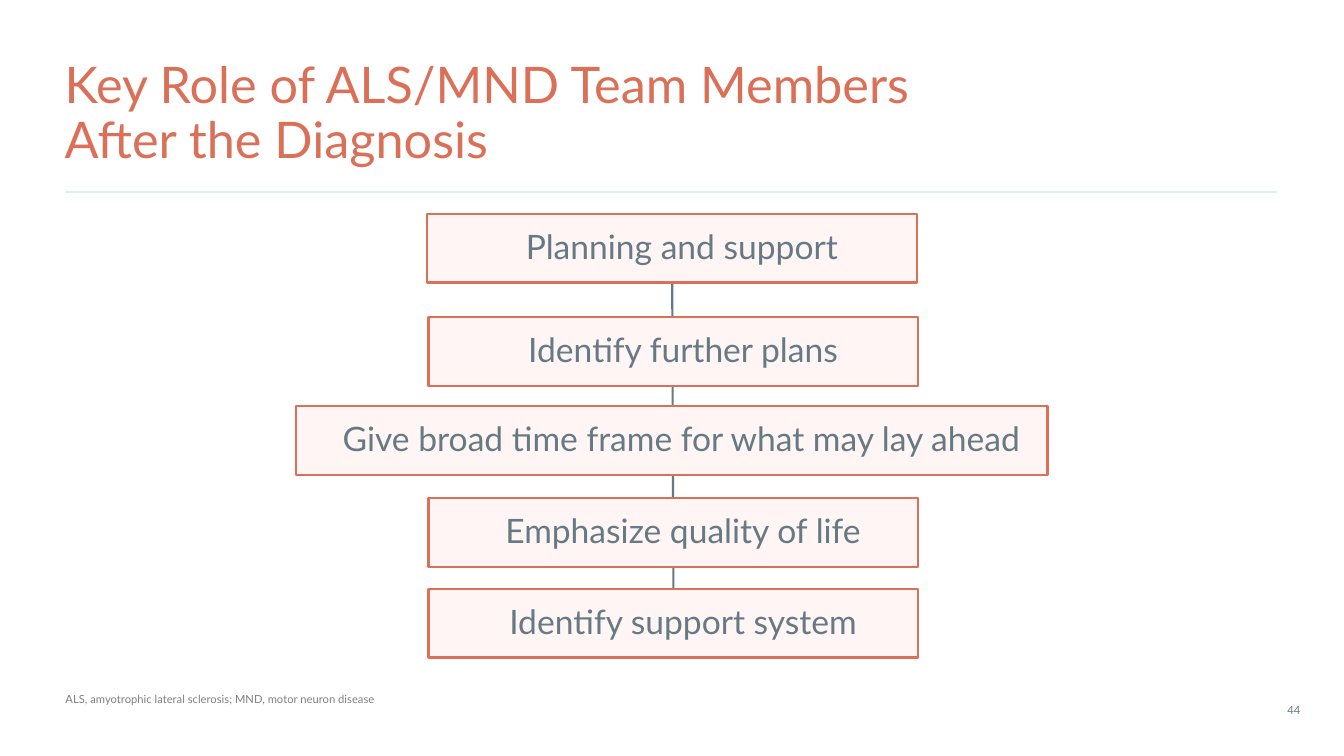
"""Build the slide on the key role of ALS/MND team members."""
import pptx
import pptx.dml.color
import pptx.enum.shapes
import pptx.enum.text
import pptx.oxml
import pptx.util

Cm = pptx.util.Cm
ALIGN = pptx.enum.text.PP_ALIGN
ANCHOR = pptx.enum.text.MSO_ANCHOR

COLORS = {
    "coral": "DB7059",
    "slate": "667A84",
    "blush": "FFF5F5",
    "mint": "E0EFED",
    "gray": "808080",
}

STEPS = [
    ("Planning and support", 10.77, 5.39, 12.34),
    ("Identify further plans", 10.8, 7.99, 12.34),
    ("Give broad time frame for what may lay ahead", 7.45, 10.24, 18.95),
    ("Emphasize quality of life", 10.8, 12.55, 12.34),
    ("Identify support system", 10.8, 14.84, 12.34),
]


class Deck:
    """Hold the style and the current slide."""

    def __init__(self):
        self.file = pptx.Presentation()
        self.file.slide_width = Cm(33.87)
        self.file.slide_height = Cm(19.05)
        self.slide = self.file.slides.add_slide(self.file.slide_layouts[5])
        self.shapes = self.slide.shapes

    def color(self, name):
        """Return the named colour."""
        return pptx.dml.color.RGBColor.from_string(COLORS[name])

    def label(self, shape, text, size, color, insets=None, para=None, **frame):
        """Put formatted text into a shape."""
        body = shape.text_frame
        body.text = text
        if insets:
            sides = ("left", "top", "right", "bottom")
            frame.update({f"margin_{side}": Cm(gap) for side, gap in zip(sides, insets)})
        for key, value in frame.items():
            setattr(body, key, value)
        first = body.paragraphs[0]
        for key, value in (para or {}).items():
            setattr(first, key, value)
        font = {"name": "Lato", "size": pptx.util.Pt(size), "bold": False}
        for key, value in font.items():
            setattr(first.font, key, value)
        first.font.color.rgb = self.color(color)

    def title(self, text, *place):
        """Fill and place the title."""
        shape = self.shapes.title
        for key, value in zip(("left", "top", "width", "height"), place):
            setattr(shape, key, Cm(value))
        self.label(shape, text, 36, "coral", (0, 0, 0, 0),
                   {"alignment": ALIGN.LEFT, "line_spacing": 0.9},
                   word_wrap=True, vertical_anchor=ANCHOR.MIDDLE,
                   auto_size=pptx.enum.text.MSO_AUTO_SIZE.NONE)

    def line(self, color, *ends):
        """Draw a straight line."""
        kind = pptx.enum.shapes.MSO_CONNECTOR.STRAIGHT
        line = self.shapes.add_connector(kind, *map(Cm, ends))
        line.line.color.rgb = self.color(color)
        line.line.width = pptx.util.Pt(1.5)
        props = line._element.spPr
        props.append(pptx.oxml.parse_xml(
            '<a:effectLst xmlns:a="http://schemas.openxmlformats.org/drawingml/2006/main"/>'))
        return line

    def box(self, text, left, top, width):
        """Draw one step of the chain."""
        kind = pptx.enum.shapes.MSO_SHAPE.RECTANGLE
        shape = self.shapes.add_shape(kind, *map(Cm, (left, top, width, 1.73)))
        shape.shadow.inherit = False
        shape.fill.solid()
        shape.fill.fore_color.rgb = self.color("blush")
        shape.line.color.rgb = self.color("coral")
        shape.line.width = pptx.util.Pt(1.5)
        self.label(shape, text, 24, "slate", (0.89, 0.4, 0.4, 0.4),
                   {"alignment": ALIGN.CENTER, "line_spacing": 0.9},
                   word_wrap=True, vertical_anchor=ANCHOR.MIDDLE)
        return shape

    def note(self, text, color, place, align=ALIGN.LEFT, wrap=True):
        """Add a line of small print."""
        shape = self.shapes.add_textbox(*map(Cm, place))
        self.label(shape, text, 8, color, para={"alignment": align}, word_wrap=wrap)


def main():
    """Draw the slide and save it."""
    deck = Deck()
    deck.line("mint", 1.63, 4.83, 32.18, 4.83)
    deck.note("44", "slate", (32.18, 17.6, 0.86, 0.61), ALIGN.CENTER, False)
    deck.title("Key Role of ALS/MND Team Members \vAfter the Diagnosis",
               1.63, 1.5, 30.56, 2.77)
    spine = deck.line("slate", 16.94, 7.12, 16.97, 14.84)
    boxes = [deck.box(*step) for step in STEPS]
    spine.begin_connect(boxes[0], 2)
    spine.end_connect(boxes[-1], 0)
    deck.note("ALS, amyotrophic lateral sclerosis; MND, motor neuron disease",
              "gray", (1.4, 17.32, 19.99, 0.61))
    deck.file.save("out.pptx")


if __name__ == "__main__":
    main()
